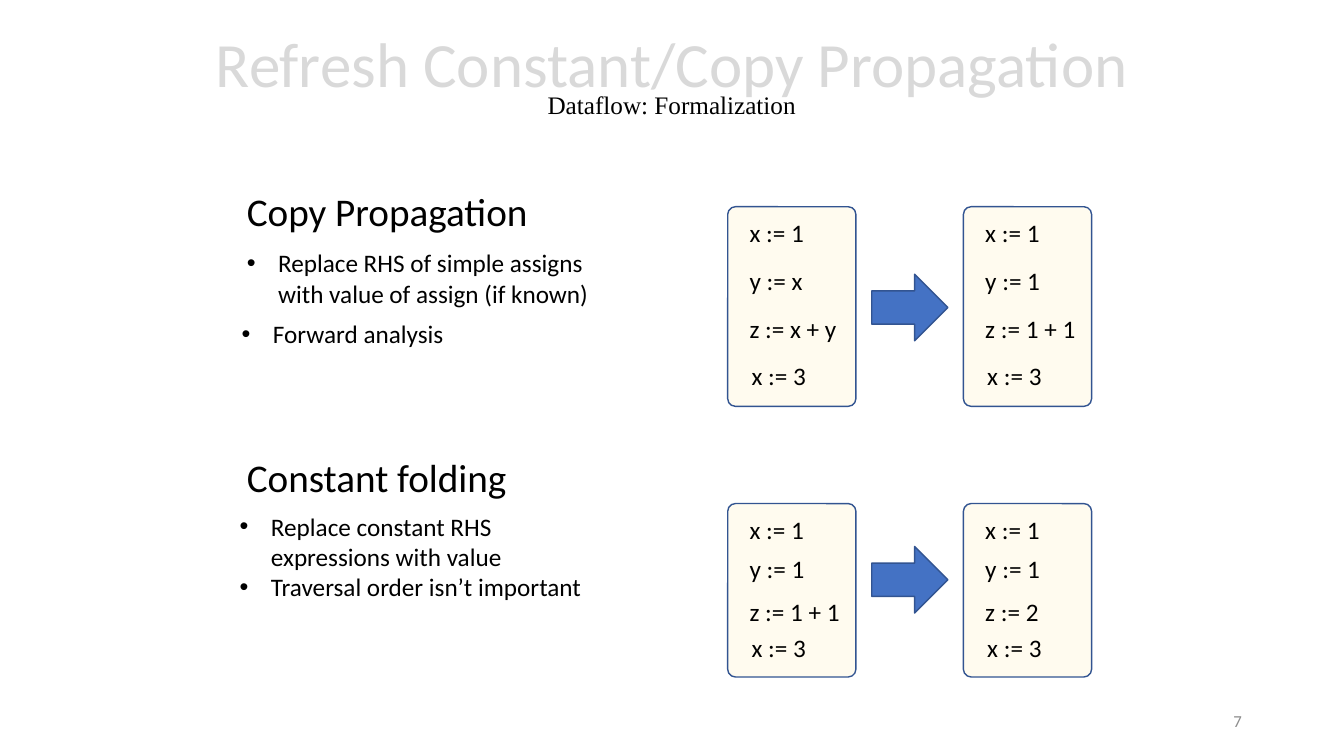
from dataclasses import dataclass

from lxml import etree
from pptx import Presentation
from pptx.dml.color import RGBColor
from pptx.enum.shapes import MSO_SHAPE
from pptx.enum.text import MSO_ANCHOR, MSO_AUTO_SIZE, PP_ALIGN
from pptx.oxml.ns import qn
from pptx.util import Cm, Pt

ROUND, ARROW = MSO_SHAPE.ROUNDED_RECTANGLE, MSO_SHAPE.RIGHT_ARROW
MIDDLE, TOP = MSO_ANCHOR.MIDDLE, MSO_ANCHOR.TOP
LEFT, CENTER, RIGHT = PP_ALIGN.LEFT, PP_ALIGN.CENTER, PP_ALIGN.RIGHT
GROW, FIXED = MSO_AUTO_SIZE.SHAPE_TO_FIT_TEXT, MSO_AUTO_SIZE.NONE


@dataclass(frozen=True)
class Theme:
    sans: str = "Calibri"
    serif: str = "Times New Roman"
    ink: str = "000000"
    pale: str = "D9D9D9"
    gray: str = "8C8C8C"
    cream: str = "FFF2CC"
    blue: str = "4472C4"
    edge: str = "325491"
    title: float = 45
    head: float = 28
    text: float = 18
    small: float = 12


@dataclass(frozen=True)
class Area:
    left: float
    top: float
    width: float
    height: float


@dataclass(frozen=True)
class Label:
    area: Area
    lines: tuple
    size: float
    color: str
    align: PP_ALIGN = LEFT
    anchor: MSO_ANCHOR = TOP
    fit: MSO_AUTO_SIZE = FIXED
    wrap: bool = True
    bullet: bool = False
    space: tuple = ()


@dataclass(frozen=True)
class Panel:
    top: float
    height: float
    arrow: float
    steps: tuple
    codes: tuple


THEME = Theme()
BOX_LEFT, BOX_STEP, BOX_WIDTH = 18.34, 5.94, 3.23
INDENT = Cm(0.79)

LABELS = (
    Label(Area(23.93, 17.65, 7.62, 1.02), ("7",), THEME.small, THEME.gray, RIGHT, MIDDLE),
    *(
        Label(Area(5.97, top, 16.21, 1.47), (name,), THEME.head, THEME.ink, space=(0.9, 10))
        for top, name in ((4.72, "Copy Propagation"), (11.43, "Constant folding"))
    ),
    *(
        Label(Area(left, top, 9.58, height), lines, THEME.text, THEME.ink, fit=GROW, bullet=True)
        for left, top, height, lines in (
            (5.97, 6.12, 1.8, ("Replace RHS of simple assigns with value of assign (if known)",)),
            (5.84, 7.9, 1.02, ("Forward analysis",)),
            (5.79, 12.75, 2.57, ("Replace constant RHS expressions with value",
                                 "Traversal order isn’t important")),
        )
    ),
)

PANELS = (
    Panel(5.21, 5.03, 6.91, (0.15, 1.35, 2.55, 3.75), (
        ("x := 1", "y := x", "z := x + y", "x := 3"),
        ("x := 1", "y := 1", "z := 1 + 1", "x := 3"),
    )),
    Panel(12.69, 4.37, 13.77, (0.15, 1.12, 2.21, 3.12), (
        ("x := 1", "y := 1", "z := 1 + 1", "x := 3"),
        ("x := 1", "y := 1", "z := 2", "x := 3"),
    )),
)


def apply(thing, **form) -> None:
    for name, value in form.items():
        setattr(thing, name, value)


def place(area: Area) -> tuple:
    return Cm(area.left), Cm(area.top), Cm(area.width), Cm(area.height)


def write(para, text: str, face: str, size: float, color: str) -> None:
    run = para.add_run()
    run.text = text
    apply(run.font, name=face, size=Pt(size))
    run.font.color.rgb = RGBColor.from_string(color)


def add_dot(para) -> None:
    props = para._p.get_or_add_pPr()
    props.set("marL", str(INDENT))
    props.set("indent", str(-INDENT))
    etree.SubElement(props, qn("a:buFont")).set("typeface", "Arial")
    etree.SubElement(props, qn("a:buChar")).set("char", "•")


def draw_label(slide, label: Label) -> None:
    frame = slide.shapes.add_textbox(*place(label.area)).text_frame
    apply(frame, word_wrap=label.wrap, auto_size=label.fit, vertical_anchor=label.anchor)
    for i, line in enumerate(label.lines):
        para = frame.add_paragraph() if i else frame.paragraphs[0]
        para.alignment = label.align
        if label.space:
            ratio, before = label.space
            apply(para, line_spacing=ratio, space_before=Pt(before))
        if label.bullet:
            add_dot(para)
        write(para, line, THEME.sans, label.size, label.color)


def draw_title(slide) -> None:
    frame = slide.shapes.add_textbox(*place(Area(4.23, 0.23, 25.4, 3.68))).text_frame
    apply(frame, word_wrap=True, vertical_anchor=MIDDLE)
    para = frame.paragraphs[0]
    apply(para, alignment=CENTER, line_spacing=0.7)
    write(para, "Refresh Constant/Copy Propagation", THEME.sans, THEME.title, THEME.pale)
    para.add_line_break()
    write(para, "Dataflow: Formalization", THEME.serif, THEME.text, THEME.ink)


def draw_shape(slide, kind: MSO_SHAPE, area: Area, color: str):
    shape = slide.shapes.add_shape(kind, *place(area))
    shape.shadow.inherit = False
    shape.fill.solid()
    shape.fill.fore_color.rgb = RGBColor.from_string(color)
    shape.line.color.rgb = RGBColor.from_string(THEME.edge)
    shape.line.width = Pt(1)
    return shape


def draw_box(slide, area: Area) -> None:
    box = draw_shape(slide, ROUND, area, THEME.cream)
    box.adjustments[0] = 0.06
    tint = box._element.spPr.find(qn("a:solidFill")).find(qn("a:srgbClr"))
    etree.SubElement(tint, qn("a:alpha")).set("val", "30000")


def draw_panel(slide, panel: Panel) -> None:
    for col, code in enumerate(panel.codes):
        left = BOX_LEFT + col * BOX_STEP
        draw_box(slide, Area(left, panel.top, BOX_WIDTH, panel.height))
        for row, (step, line) in enumerate(zip(panel.steps, code)):
            inset = 0.35 if row == len(code) - 1 else 0.3
            width = 2.8 if len(line) > 6 else 1.9
            area = Area(left + inset, panel.top + step, width, 1.02)
            draw_label(slide, Label(area, (line,), THEME.text, THEME.ink, fit=GROW, wrap=False))
    draw_shape(slide, ARROW, Area(21.97, panel.arrow, 1.92, 1.68), THEME.blue)


def main() -> None:
    deck = Presentation()
    apply(deck, slide_width=Cm(33.87), slide_height=Cm(19.05))
    slide = deck.slides.add_slide(deck.slide_layouts[6])
    draw_title(slide)
    for label in LABELS:
        draw_label(slide, label)
    for panel in PANELS:
        draw_panel(slide, panel)
    deck.save("out.pptx")


if __name__ == "__main__":
    main()
